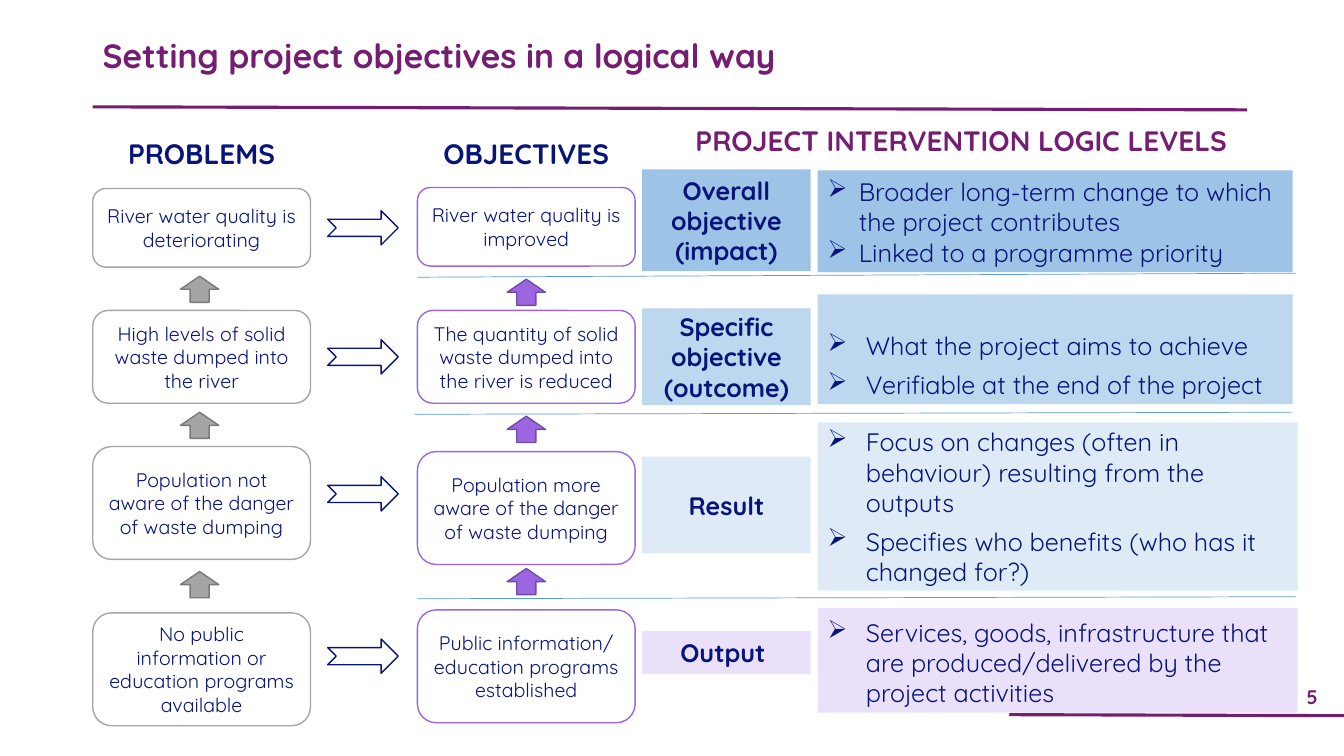
import pptx
import pptx.dml.color
import pptx.enum.shapes
import pptx.enum.text
import pptx.oxml.ns
import pptx.util
from lxml import etree

PX = 9144  # EMU per px, 100 px to the inch
FONT = "Quicksand"
NAVY, PLUM, WHITE = "07147A", "751D70", "FFFFFF"
GREY, PURPLE, RULE = "A5A5A5", "9B66E0", "5B9BD5"

SHAPE = pptx.enum.shapes.MSO_SHAPE
ALIGN = pptx.enum.text.PP_ALIGN
ANCHOR = pptx.enum.text.MSO_ANCHOR

PROBLEM_LEFT, OBJECTIVE_LEFT, CARD_WIDTH = 92, 414, 216
LEVEL_LEFT, LEVEL_WIDTH, DETAIL_LEFT = 637, 167, 811

# (text, top, height) of each card, from top to bottom
PROBLEMS = [
    ("River water quality is deteriorating", 187, 78),
    ("High levels of solid waste dumped into the river", 308, 92),
    ("Population not aware of the danger of waste dumping", 443, 112),
    ("No public information or education programs available", 608, 112),
]
OBJECTIVES = [
    ("River water quality is improved", 186, 78),
    ("The quantity of solid waste dumped into the river is reduced", 308, 92),
    ("Population more aware of the danger of waste dumping", 448, 112),
    ("Public information/ education programs established", 605, 112),
]
# (name, top, height, fill)
LEVELS = [
    ("Overall objective (impact)", 168, 101, "9DC3E6"),
    ("Specific objective (outcome)", 306, 96, "BDD7EE"),
    ("Result", 453, 96, "DEEBF7"),
    ("Output ", 626, 43, "EBE0F9"),
]
# (bullets, top, width, height, anchor, hanging indent, gap in points)
DETAILS = [
    (["Broader long-term change to which the project contributes",
      "Linked to a programme priority"], 169, 471, 101, ANCHOR.BOTTOM, 31, 0),
    (["What the project aims to achieve",
      "Verifiable at the end of the project"], 292, 471, 109, ANCHOR.BOTTOM, 38, 3),
    (["Focus on changes (often in behaviour) resulting from the outputs",
      "Specifies who benefits (who has it changed for?)"],
     419, 476, 167, ANCHOR.MIDDLE, 38, 3),
    (["Services, goods, infrastructure that are produced/delivered by the project activities"],
     603, 476, 104, ANCHOR.BOTTOM, 38, 0),
]


def px(length):
    return pptx.util.Emu(length * PX)


def color(value):
    return pptx.dml.color.RGBColor.from_string(value)


def add_bullet(para, indent):
    """Give the paragraph an arrowhead bullet with a hanging indent."""
    properties = para._p.get_or_add_pPr()
    properties.set("marL", str(px(indent)))
    properties.set("indent", str(-px(indent)))
    bullet = etree.SubElement(properties, pptx.oxml.ns.qn("a:buChar"))
    bullet.set("char", "➢")


def write(shape, *texts, size=14, ink=NAVY, bold=False, align=ALIGN.CENTER,
          anchor=ANCHOR.MIDDLE, indent=0, gap=0, spacing=None):
    """Write one paragraph per text into the shape."""
    frame = shape.text_frame
    frame.word_wrap = True
    frame.vertical_anchor = anchor
    for index, text in enumerate(texts):
        para = frame.add_paragraph() if index else frame.paragraphs[0]
        if indent:
            add_bullet(para, indent)
        para.alignment = align
        para.space_before = pptx.util.Pt(gap if index else 0)
        para.space_after = pptx.util.Pt(gap)
        if spacing:
            para.line_spacing = spacing
        span = para.add_run()
        span.text = text
        span.font.name = FONT
        span.font.size = pptx.util.Pt(size)
        span.font.bold = bold
        span.font.color.rgb = color(ink)


def add_label(page, text, left, top, width, height, **style):
    box = page.shapes.add_textbox(px(left), px(top), px(width), px(height))
    write(box, text, bold=True, **style)


def add_figure(page, kind, left, top, width, height, fill, outline=None):
    shape = page.shapes.add_shape(kind, px(left), px(top), px(width), px(height))
    shape.shadow.inherit = False
    shape.fill.solid()
    shape.fill.fore_color.rgb = color(fill)
    if outline:
        shape.line.color.rgb = color(outline)
        shape.line.width = pptx.util.Pt(1)
    else:
        shape.line.fill.background()
    return shape


def add_line(page, start, end, ink, weight):
    line = page.shapes.add_connector(
        pptx.enum.shapes.MSO_CONNECTOR.STRAIGHT, *map(px, start + end))
    line.line.color.rgb = color(ink)
    line.line.width = pptx.util.Pt(weight)
    etree.SubElement(line._element.spPr, pptx.oxml.ns.qn("a:effectLst"))


def add_chain(page, heading, cards, left, outline, arrow_left, arrow_tops, arrow_edge):
    """Draw a headed column of cards linked by upward arrows."""
    add_label(page, heading, left, 130, CARD_WIDTH, 44, size=20, anchor=ANCHOR.BOTTOM)
    for text, top, height in cards:
        card = add_figure(page, SHAPE.ROUNDED_RECTANGLE, left, top,
                          CARD_WIDTH, height, WHITE, outline)
        write(card, text)
    for top in arrow_tops:
        add_figure(page, SHAPE.UP_ARROW, arrow_left, top, 38, 26, outline, arrow_edge)


def add_levels(page):
    add_label(page, "PROJECT INTERVENTION LOGIC LEVELS", LEVEL_LEFT, 116, 633, 45,
              size=20, ink=PLUM, anchor=ANCHOR.BOTTOM)
    for level, detail in zip(LEVELS, DETAILS):
        name, top, height, fill = level
        tile = add_figure(page, SHAPE.RECTANGLE, LEVEL_LEFT, top, LEVEL_WIDTH, height, fill)
        write(tile, name, size=18, bold=True)
        bullets, top, width, height, anchor, indent, gap = detail
        panel = add_figure(page, SHAPE.RECTANGLE, DETAIL_LEFT, top, width, height, fill)
        write(panel, *bullets, size=18, align=ALIGN.LEFT, anchor=anchor,
              indent=indent, gap=gap)


def main():
    deck = pptx.Presentation()
    deck.slide_width, deck.slide_height = px(1333), px(750)
    page = deck.slides.add_slide(deck.slide_layouts[6])

    add_line(page, (92, 106), (1237, 109), PLUM, 2.25)
    add_line(page, (1001, 709), (1333, 710), PLUM, 2.25)
    add_label(page, "5", 1270, 673, 63, 36, size=14, ink=PLUM)
    add_label(page, "Setting project objectives in a logical way", 92, 34, 973, 65,
              size=24, ink=PLUM, align=ALIGN.LEFT, anchor=ANCHOR.TOP, spacing=0.9)

    add_chain(page, "PROBLEMS", PROBLEMS, PROBLEM_LEFT, GREY,
              179, (274, 409, 567), "7A7A7A")
    add_chain(page, "OBJECTIVES", OBJECTIVES, OBJECTIVE_LEFT, PURPLE,
              503, (277, 413, 564), "734BA6")
    for top in (209, 337, 473, 634):
        add_figure(page, SHAPE.NOTCHED_RIGHT_ARROW, 325, top, 70, 34, WHITE, NAVY)

    for start, end in (((414, 275), (1285, 271)),
                       ((411, 411), (1281, 409)),
                       ((414, 594), (1285, 592))):
        add_line(page, start, end, RULE, 0.5)
    add_levels(page)

    deck.save("out.pptx")


if __name__ == "__main__":
    main()
